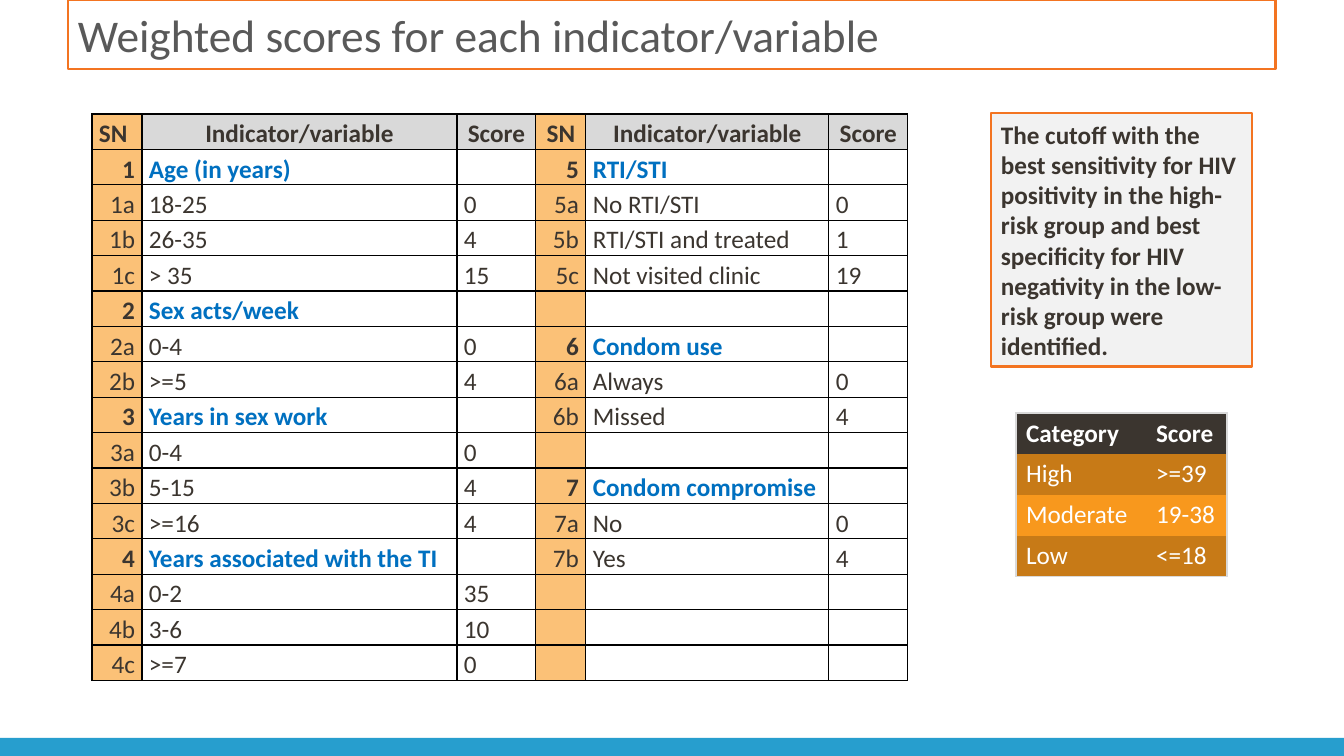
import pptx
import pptx.util
import pptx.dml.color
import pptx.enum.shapes
import pptx.enum.text
import pptx.oxml
import pptx.oxml.ns

PX = 914400 / 100.8
ALIGN = pptx.enum.text.PP_ALIGN
COLORS = {
    "white": "FFFFFF", "ink": "3B352F", "title": "595959", "heading": "0070C0",
    "orange": "F37421", "bar": "279ECE", "number": "FBC177", "header": "D9D9D9",
    "note": "F2F2F2", "dark": "C77A17", "bright": "F8981D", "black": "000000",
}
RGB = {name: pptx.dml.color.RGBColor.from_string(value) for name, value in COLORS.items()}
PLAIN_TABLE = "{2D5ABB26-0587-4C30-8999-92F81FD0307C}"

deck = pptx.Presentation()
deck.slide_width = round(1344 * PX)
deck.slide_height = round(756 * PX)
page = deck.slides.add_slide(deck.slide_layouts[6])


def write(frame, text, size, color, bold=False, align=ALIGN.LEFT):
    frame.text = text
    para = frame.paragraphs[0]
    para.alignment = align
    para.font.size = pptx.util.Pt(size)
    for span in para.runs:
        span.font.name = "Calibri"
        span.font.size = pptx.util.Pt(size)
        span.font.bold = bold
        span.font.color.rgb = RGB[color]
    return para


def set_borders(cell, sides, color):
    properties = cell._tc.get_or_add_tcPr()
    for position, side in enumerate(sides):
        properties.insert(position, pptx.oxml.parse_xml(
            f'<a:ln{side} {pptx.oxml.ns.nsdecls("a")} w="12700"><a:solidFill>'
            f'<a:srgbClr val="{COLORS[color]}"/></a:solidFill></a:ln{side}>'))


boxes = [
    ((0, 738, 1344, 18), "bar", None, "", 18, "ink", False),
    ((68, 0, 1208, 69), "white", "orange",
     "Weighted scores for each indicator/variable", 32.4, "title", False),
    ((991, 113, 261, 254), "note", "orange",
     "The cutoff with the best sensitivity for HIV positivity in the high-risk group and "
     "best specificity for HIV negativity in the low-risk group were identified.",
     18, "ink", True),
]
for bounds, fill, line, text, size, color, bold in boxes:
    box = page.shapes.add_shape(pptx.enum.shapes.MSO_SHAPE.RECTANGLE,
                                *[round(length * PX) for length in bounds])
    box.shadow.inherit = False
    box.fill.solid()
    box.fill.fore_color.rgb = RGB[fill]
    if line:
        box.line.color.rgb = RGB[line]
        box.line.width = pptx.util.Pt(2)
    else:
        box.line.fill.background()
    if text:
        box.text_frame.word_wrap = True
        box.text_frame.vertical_anchor = pptx.enum.text.MSO_ANCHOR.MIDDLE
        write(box.text_frame, text, size, color, bold)

score_rows = [
    ("SN", "Indicator/variable", "Score", "SN", "Indicator/variable", "Score"),
    ("1", "Age (in years)", "", "5", "RTI/STI", ""),
    ("1a", "18-25", "0", "5a", "No RTI/STI", "0"),
    ("1b", "26-35", "4", "5b", "RTI/STI and treated", "1"),
    ("1c", "> 35", "15", "5c", "Not visited clinic", "19"),
    ("2", "Sex acts/week", "", "", "", ""),
    ("2a", "0-4", "0", "6", "Condom use", ""),
    ("2b", ">=5", "4", "6a", "Always", "0"),
    ("3", "Years in sex work", "", "6b", "Missed", "4"),
    ("3a", "0-4", "0", "", "", ""),
    ("3b", "5-15", "4", "7", "Condom compromise", ""),
    ("3c", ">=16", "4", "7a", "No", "0"),
    ("4", "Years associated with the TI", "", "7b", "Yes", "4"),
    ("4a", "0-2", "35", "", "", ""),
    ("4b", "3-6", "10", "", "", ""),
    ("4c", ">=7", "0", "", "", ""),
]
category_rows = [("Category", "Score"), ("High", ">=39"), ("Moderate", "19-38"), ("Low", "<=18")]

tables = []
for rows, left, top, widths, row_height in [
    (score_rows, 92, 114, [50, 315, 79, 50, 243, 79], 35),
    (category_rows, 1016, 413, [130, 81], 40),
]:
    table = page.shapes.add_table(
        len(rows), len(widths), round(left * PX), round(top * PX),
        round(sum(widths) * PX), round(row_height * len(rows) * PX)).table
    table.first_row = False
    table.horz_banding = False
    table._tbl.tblPr.find(pptx.oxml.ns.qn("a:tableStyleId")).text = PLAIN_TABLE
    for column, width in zip(table.columns, widths):
        column.width = round(width * PX)
    for row in table.rows:
        row.height = round(row_height * PX)
    tables.append(table)
score_table, category_table = tables

for row, values in enumerate(score_rows):
    for column, text in enumerate(values):
        cell = score_table.cell(row, column)
        cell.margin_left = cell.margin_right = round(7 * PX)
        cell.margin_top = cell.margin_bottom = 0
        is_number = column % 3 == 0
        is_section = values[column - column % 3].isdigit()
        align = ALIGN.LEFT
        if row == 0 and column > 0:
            align = ALIGN.CENTER
        elif row > 0 and is_number:
            align = ALIGN.RIGHT
        color = "heading" if is_section and not is_number else "ink"
        para = write(cell.text_frame, text, 18, color, row == 0 or is_section, align)
        para.line_spacing = 1.15
        if is_number or row == 0:
            cell.fill.solid()
            cell.fill.fore_color.rgb = RGB["number" if is_number else "header"]
        else:
            cell.fill.background()
        set_borders(cell, "LRTB", "black")

for row, values in enumerate(category_rows):
    for column, text in enumerate(values):
        cell = category_table.cell(row, column)
        write(cell.text_frame, text, 18, "white", row == 0)
        cell.fill.solid()
        cell.fill.fore_color.rgb = RGB[["ink", "dark", "bright", "dark"][row]]
        sides = "LR"[column]
        if row == 0:
            sides += "T"
        elif row == len(category_rows) - 1:
            sides += "B"
        set_borders(cell, sides, "header")

deck.save("out.pptx")
